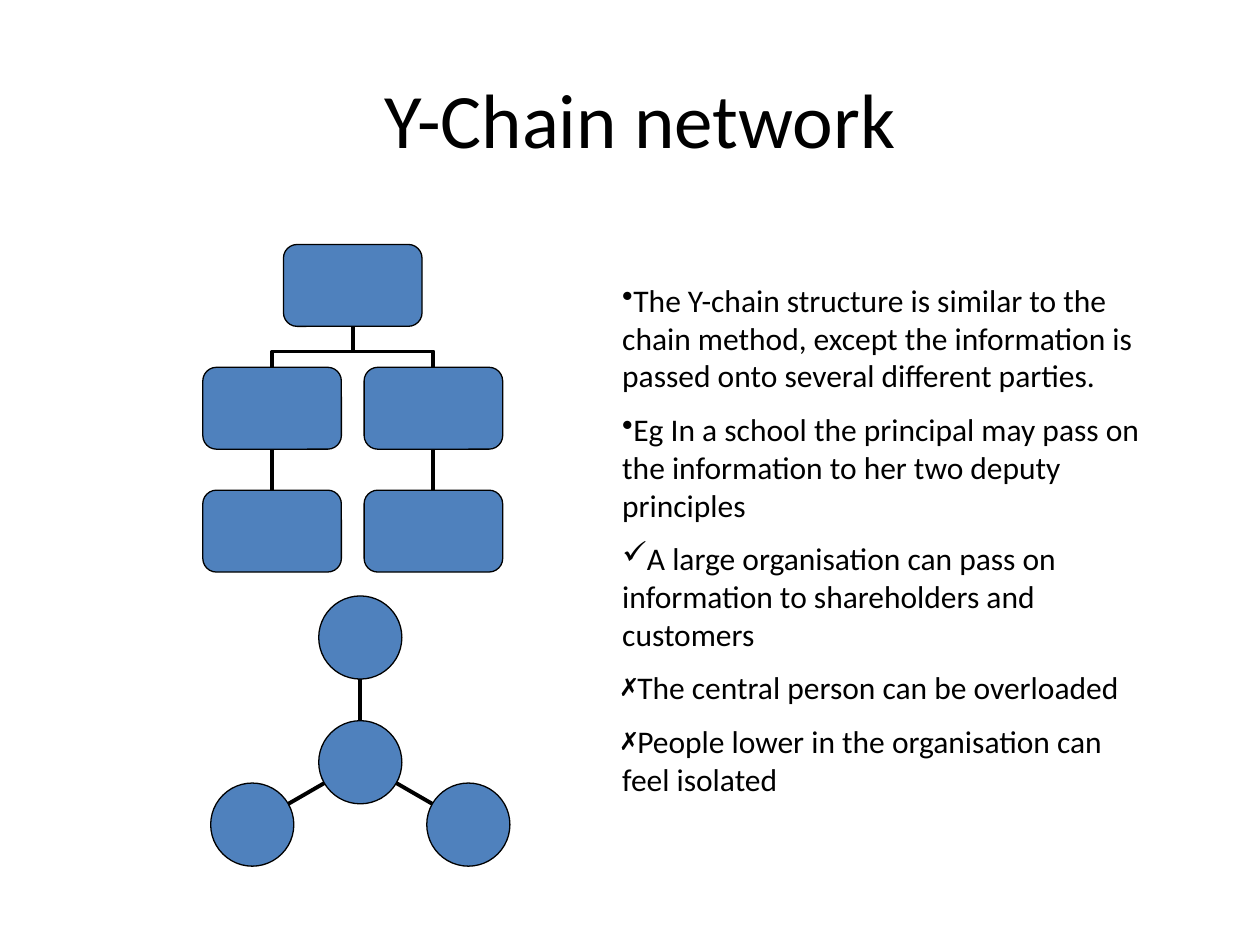
from math import cos, radians, sin

from lxml.etree import SubElement
from pptx import Presentation
from pptx.dml.color import RGBColor
from pptx.enum.shapes import MSO_CONNECTOR as LINK, MSO_SHAPE as SHAPE
from pptx.enum.text import MSO_ANCHOR as ANCHOR, PP_ALIGN as ALIGN
from pptx.oxml.ns import qn
from pptx.util import Inches, Pt

COLORS = {"node": "4F81BD", "ink": "000000"}
FONT = "Calibri"
TITLE = "Y-Chain network"
POINTS = [
    ("•", "The Y-chain structure is similar to the chain method, except the "
          "information is passed onto several different parties."),
    ("•", "Eg In a school the principal may pass on the information to her "
          "two deputy principles"),
    ("✓", "A large organisation can pass on information to shareholders and "
          "customers"),
    ("✗", "The central person can be overloaded"),
    ("✗", "People lower in the organisation can feel isolated"),
]

# Tree: column and row of each box, counted from the top box
TREE = {"head": (0, 0), "left": (-1, 1), "right": (1, 1),
        "left end": (-1, 2), "right end": (1, 2)}
TREE_CENTER, TREE_TOP = 2.8, 1.94
BOX_W, BOX_H = 1.1, 0.65
COLUMN_STEP, ROW_STEP = 0.64, 0.975

# Star: three circles around a hub
HUB_X, HUB_Y = 2.86, 6.05
RADIUS, SPOKE = 0.33, 0.99
SPOKE_ANGLES = (30, 150, 270)


def color(name):
    return RGBColor.from_string(COLORS[name])


def add_text(page, area, size):
    box = page.shapes.add_textbox(*map(Inches, area))
    box.text_frame.word_wrap = True

    def write(para, text):
        span = para.add_run()
        span.text = text
        span.font.name, span.font.size = FONT, Pt(size)
        span.font.color.rgb = color("ink")

    return box.text_frame, write


def add_node(group, kind, x, y, width, height):
    """Add a filled shape centred on x, y."""
    node = group.shapes.add_shape(kind, *map(
        Inches, (x - width / 2, y - height / 2, width, height)))
    node.shadow.inherit = False
    node.fill.solid()
    node.fill.fore_color.rgb = color("node")
    node.line.color.rgb = color("ink")
    node.line.width = Pt(0.75)
    return node


def add_link(group, start, end, kind=LINK.STRAIGHT):
    link = group.shapes.add_connector(kind, *map(Inches, (*start, *end)))
    link.line.color.rgb = color("ink")
    link.line.width = Pt(2.25)
    SubElement(link._element.spPr, qn("a:effectLst"))
    return link


def add_branch(group, side):
    """Add an elbow that rises from a second-row box to the head box."""
    gap = ROW_STEP - BOX_H
    x = TREE_CENTER + side * COLUMN_STEP / 2
    y = TREE_TOP + BOX_H + gap / 2
    # Before its quarter turn the elbow is as wide as the gap is high
    start = (x + side * gap / 2, y - COLUMN_STEP / 2)
    end = (x - side * gap / 2, y + COLUMN_STEP / 2)
    properties = add_link(group, start, end, LINK.ELBOW)._element.spPr
    turn = 90 if side > 0 else 270
    properties.find(qn("a:xfrm")).set("rot", str(turn * 60000))
    geometry = properties.find(qn("a:prstGeom"))
    adjustments = geometry.find(qn("a:avLst"))
    if adjustments is None:
        adjustments = SubElement(geometry, qn("a:avLst"))
    SubElement(adjustments, qn("a:gd"), name="adj1", fmla="val 38500")


def add_tree(page):
    group = page.shapes.add_group_shape()
    for side in (1, -1):
        add_branch(group, side)
    boxes = {
        name: add_node(group, SHAPE.ROUNDED_RECTANGLE,
                       TREE_CENTER + column * COLUMN_STEP,
                       TREE_TOP + row * ROW_STEP + BOX_H / 2, BOX_W, BOX_H)
        for name, (column, row) in TREE.items()
    }
    for name in ("left", "right"):
        x = TREE_CENTER + TREE[name][0] * COLUMN_STEP
        low = TREE_TOP + 2 * ROW_STEP
        link = add_link(group, (x, low), (x, low - ROW_STEP + BOX_H))
        link.begin_connect(boxes[name + " end"], 0)
        link.end_connect(boxes[name], 2)


def add_star(page):
    group = page.shapes.add_group_shape()

    def spoke_point(angle, distance):
        turn = radians(angle)
        return HUB_X + distance * cos(turn), HUB_Y + distance * sin(turn)

    for angle in SPOKE_ANGLES:
        add_link(group, spoke_point(angle, RADIUS),
                 spoke_point(angle, SPOKE - RADIUS))
        add_node(group, SHAPE.OVAL, *spoke_point(angle, SPOKE),
                 2 * RADIUS, 2 * RADIUS)
    add_node(group, SHAPE.OVAL, HUB_X, HUB_Y, 2 * RADIUS, 2 * RADIUS)


def main():
    deck = Presentation()
    deck.slide_width, deck.slide_height = Inches(10), Inches(7.5)
    page = deck.slides.add_slide(deck.slide_layouts[6])

    frame, write = add_text(page, (0.33, 0.47, 9.5, 0.92), 44)
    frame.vertical_anchor = ANCHOR.MIDDLE
    frame.paragraphs[0].alignment = ALIGN.CENTER
    write(frame.paragraphs[0], TITLE)

    frame, write = add_text(page, (4.84, 2.18, 4.33, 4.91), 18)
    for index, (bullet, text) in enumerate(POINTS):
        para = frame.add_paragraph() if index else frame.paragraphs[0]
        para.space_before = Pt(9 if index else 0)
        SubElement(para._p.get_or_add_pPr(), qn("a:buChar"), char=bullet)
        write(para, text)

    add_tree(page)
    add_star(page)
    deck.save("out.pptx")


if __name__ == "__main__":
    main()
